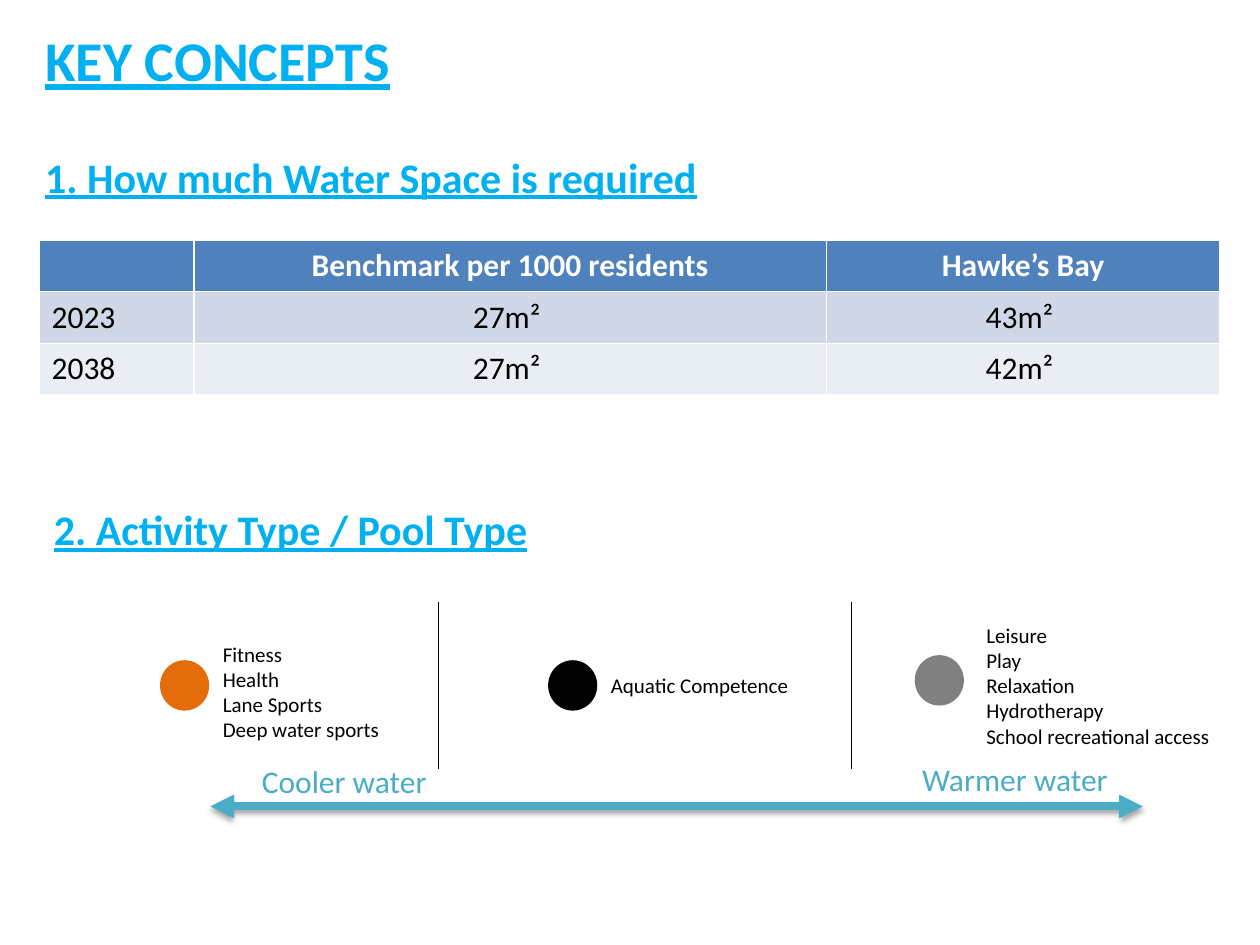
import dataclasses

import pptx
import pptx.dml.color
import pptx.enum.shapes
import pptx.enum.text
import pptx.oxml
import pptx.oxml.ns
import pptx.util
from pptx.util import Inches

HEADING = "00B0F0"
TEAL = "4BACC6"
BLACK = "000000"
WHITE = "FFFFFF"
DOT_WIDTH, DOT_HEIGHT = 0.39, 0.4
LEFT = pptx.enum.text.PP_ALIGN.LEFT
CENTER = pptx.enum.text.PP_ALIGN.CENTER


@dataclasses.dataclass
class Label:
    text: str
    left: float
    top: float
    width: float
    height: float
    size: float
    color: str
    heading: bool = False


@dataclasses.dataclass
class Dot:
    left: float
    top: float
    color: str


def rgb(color: str) -> pptx.dml.color.RGBColor:
    return pptx.dml.color.RGBColor.from_string(color)


def write(frame, text: str, *, size: float, color: str = BLACK, bold: bool = False,
          underline: bool = False, align=LEFT) -> None:
    """Put one paragraph per line of text into the frame."""
    frame.word_wrap = True
    for index, line in enumerate(text.split("\n")):
        paragraph = frame.add_paragraph() if index else frame.paragraphs[0]
        paragraph.alignment = align
        font = paragraph.add_run().font
        paragraph.runs[0].text = line
        font.name = "Calibri"
        font.size = pptx.util.Pt(size)
        font.bold = bold
        font.underline = underline
        font.color.rgb = rgb(color)


def draw_label(slide, label: Label) -> None:
    box = slide.shapes.add_textbox(Inches(label.left), Inches(label.top),
                                   Inches(label.width), Inches(label.height))
    write(box.text_frame, label.text, size=label.size, color=label.color,
          bold=label.heading, underline=label.heading)


def draw_dot(slide, dot: Dot) -> None:
    oval = slide.shapes.add_shape(pptx.enum.shapes.MSO_SHAPE.OVAL, Inches(dot.left),
                                  Inches(dot.top), Inches(DOT_WIDTH), Inches(DOT_HEIGHT))
    oval.shadow.inherit = False
    oval.fill.solid()
    oval.fill.fore_color.rgb = rgb(dot.color)
    oval.line.fill.background()


def draw_line(slide, start: tuple[float, float], end: tuple[float, float],
              color: str, weight: float):
    """Draw a straight line and return it with its empty effect list."""
    line = slide.shapes.add_connector(pptx.enum.shapes.MSO_CONNECTOR.STRAIGHT,
                                      *map(Inches, start + end))
    line.line.color.rgb = rgb(color)
    line.line.width = pptx.util.Pt(weight)
    effects = pptx.oxml.parse_xml(f"<a:effectLst {pptx.oxml.ns.nsdecls('a')}/>")
    line._element.spPr.append(effects)
    return line, effects


def draw_temperature_arrow(slide) -> None:
    arrow, effects = draw_line(slide, (1.67, 6.4), (9.07, 6.4), TEAL, 4.5)
    namespace = pptx.oxml.ns.nsdecls("a")
    for end in ("headEnd", "tailEnd"):
        arrow.line._get_or_add_ln().append(
            pptx.oxml.parse_xml(f'<a:{end} {namespace} type="triangle"/>'))
    blur, distance = pptx.util.Pt(3.1), pptx.util.Pt(1.8)
    effects.append(pptx.oxml.parse_xml(
        f'<a:outerShdw {namespace} blurRad="{blur}" dist="{distance}" dir="5400000" '
        f'rotWithShape="0"><a:srgbClr val="{BLACK}"><a:alpha val="35000"/>'
        f'</a:srgbClr></a:outerShdw>'))


def draw_water_space(slide) -> None:
    rows = [("", "Benchmark per 1000 residents", "Hawke’s Bay"),
            ("2023", "27m² ", "43m² "),
            ("2038", "27m² ", "42m² ")]
    fills = ["4F81BD", "D0D8E8", "E9EDF4"]
    widths = [1.23, 5.02, 3.12]
    heights = [0.39, 0.41, 0.41]
    table = slide.shapes.add_table(len(rows), len(widths), Inches(0.31), Inches(1.91),
                                   Inches(sum(widths)), Inches(sum(heights))).table
    for column, width in zip(table.columns, widths):
        column.width = Inches(width)
    for r, (row, fill, height) in enumerate(zip(rows, fills, heights)):
        table.rows[r].height = Inches(height)
        for c, text in enumerate(row):
            cell = table.cell(r, c)
            cell.fill.solid()
            cell.fill.fore_color.rgb = rgb(fill)
            if text:
                write(cell.text_frame, text, size=18, color=BLACK if r else WHITE,
                      bold=r == 0, align=CENTER if c else LEFT)


LABELS = [
    Label("1. How much Water Space is required", 0.26, 1.15, 5.56, 0.5, 24, HEADING, True),
    Label("2. Activity Type / Pool Type", 0.33, 3.95, 5.56, 0.5, 24, HEADING, True),
    Label("Fitness\nHealth\nLane Sports\nDeep water sports", 1.67, 5.04, 2.2, 0.91, 12, BLACK),
    Label("Aquatic Competence", 4.75, 5.29, 1.8, 0.3, 12, BLACK),
    Label("Leisure\nPlay\nRelaxation\nHydrotherapy\nSchool recreational access",
          7.73, 4.89, 2.2, 1.11, 12, BLACK),
    Label("Cooler water", 1.98, 6, 1.7, 0.4, 18, TEAL),
    Label("Warmer water", 7.22, 5.98, 1.7, 0.4, 18, TEAL),
]
DOTS = [Dot(1.27, 5.24, "E46C0A"), Dot(4.35, 5.24, BLACK), Dot(7.26, 5.2, "808080")]
DIVIDERS = [3.48, 6.76]


def main() -> None:
    deck = pptx.Presentation()
    deck.slide_width, deck.slide_height = Inches(10), Inches(7.5)
    slide = deck.slides.add_slide(deck.slide_layouts.get_by_name("Title Only"))

    # Title
    title = slide.shapes.title
    title.left, title.top = Inches(0.26), Inches(0.15)
    title.width, title.height = Inches(5.56), Inches(0.64)
    title.text_frame.vertical_anchor = pptx.enum.text.MSO_ANCHOR.TOP
    title.text_frame.auto_size = pptx.enum.text.MSO_AUTO_SIZE.NONE
    write(title.text_frame, "KEY CONCEPTS", size=32, color=HEADING, bold=True, underline=True)

    # Water space per resident
    draw_water_space(slide)

    # Activities along the water temperature scale
    for dot in DOTS:
        draw_dot(slide, dot)
    for x in DIVIDERS:
        draw_line(slide, (x, 4.78), (x, 6.1), BLACK, 0.75)
    draw_temperature_arrow(slide)

    # Headings and labels
    for label in LABELS:
        draw_label(slide, label)

    deck.save("out.pptx")


if __name__ == "__main__":
    main()
